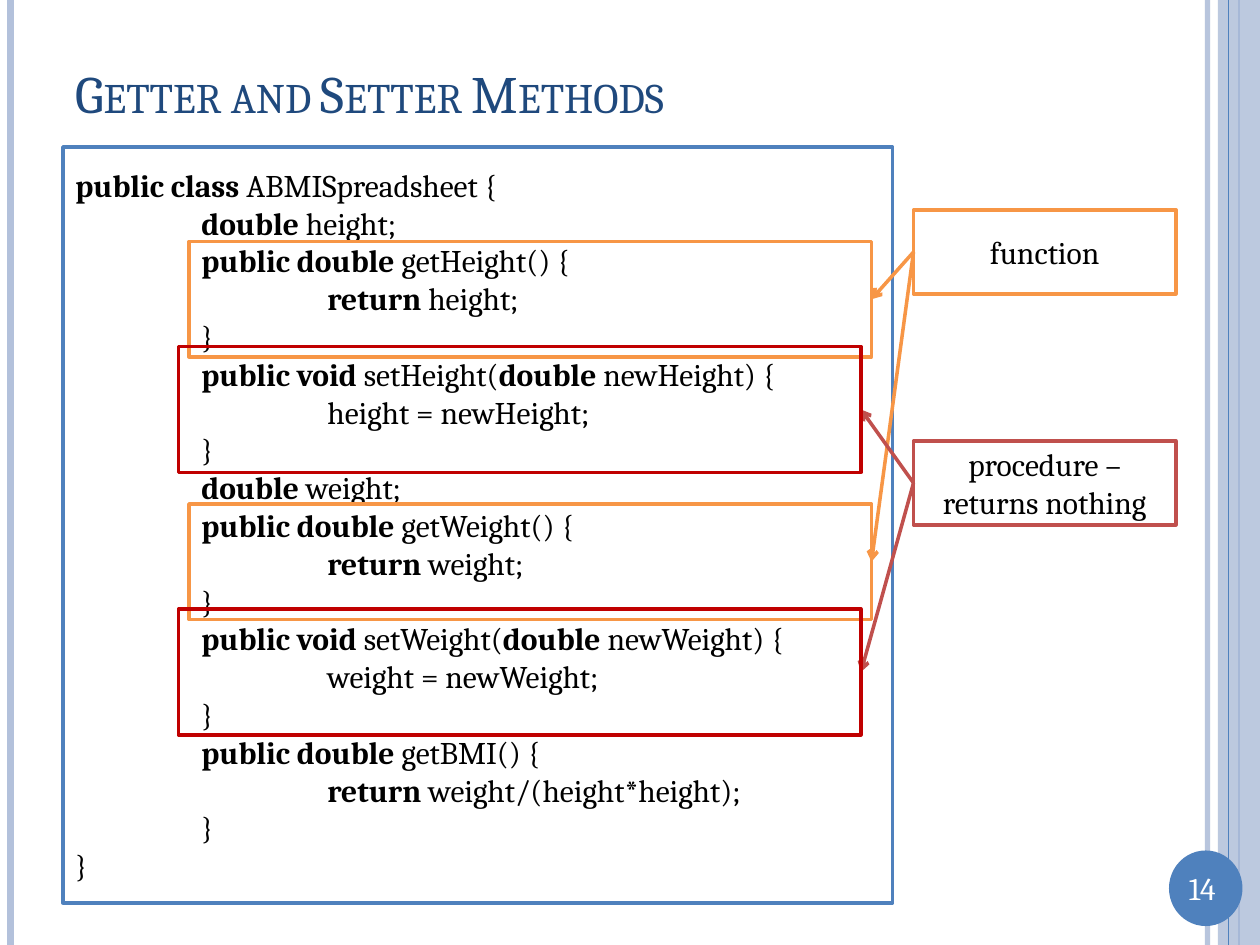
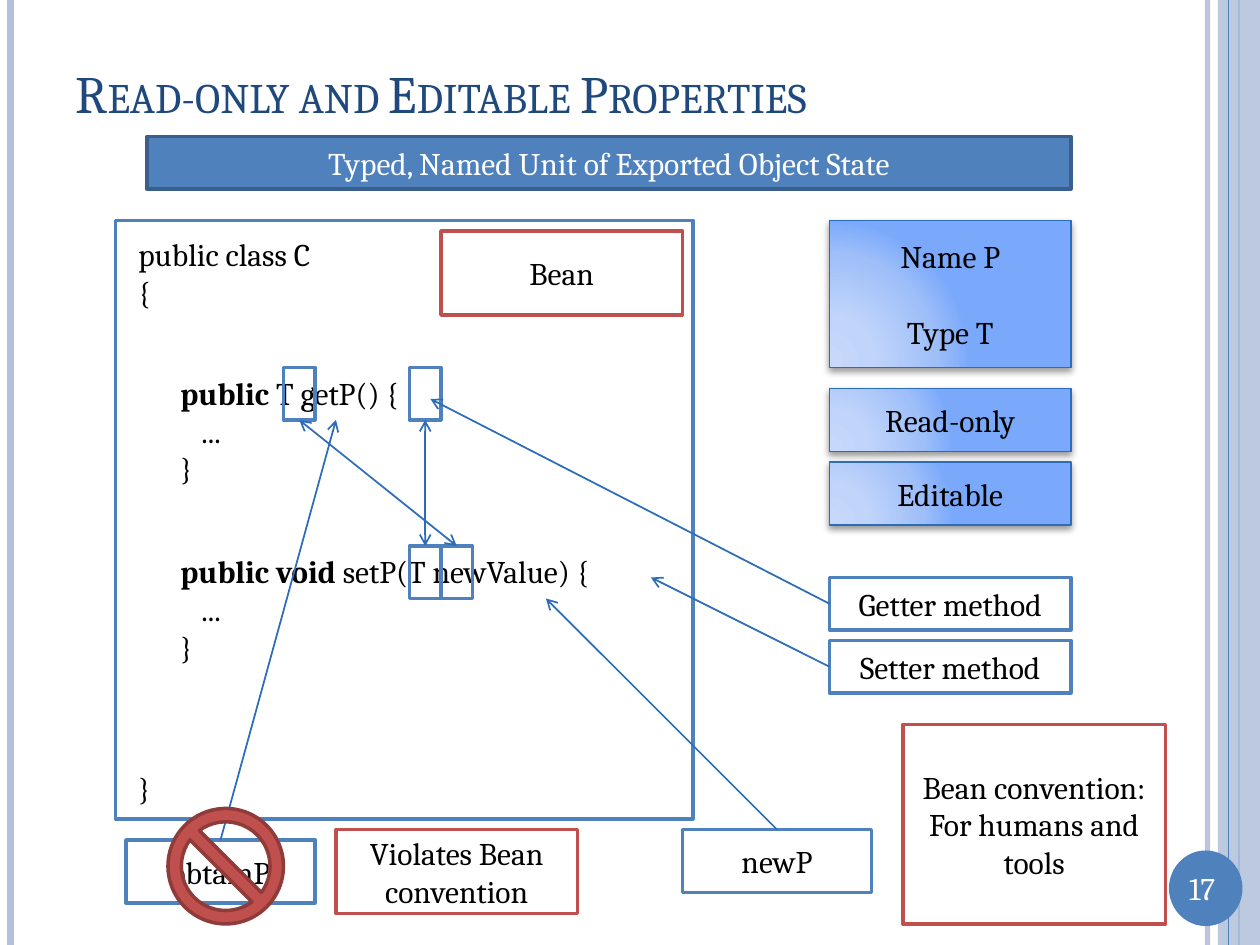
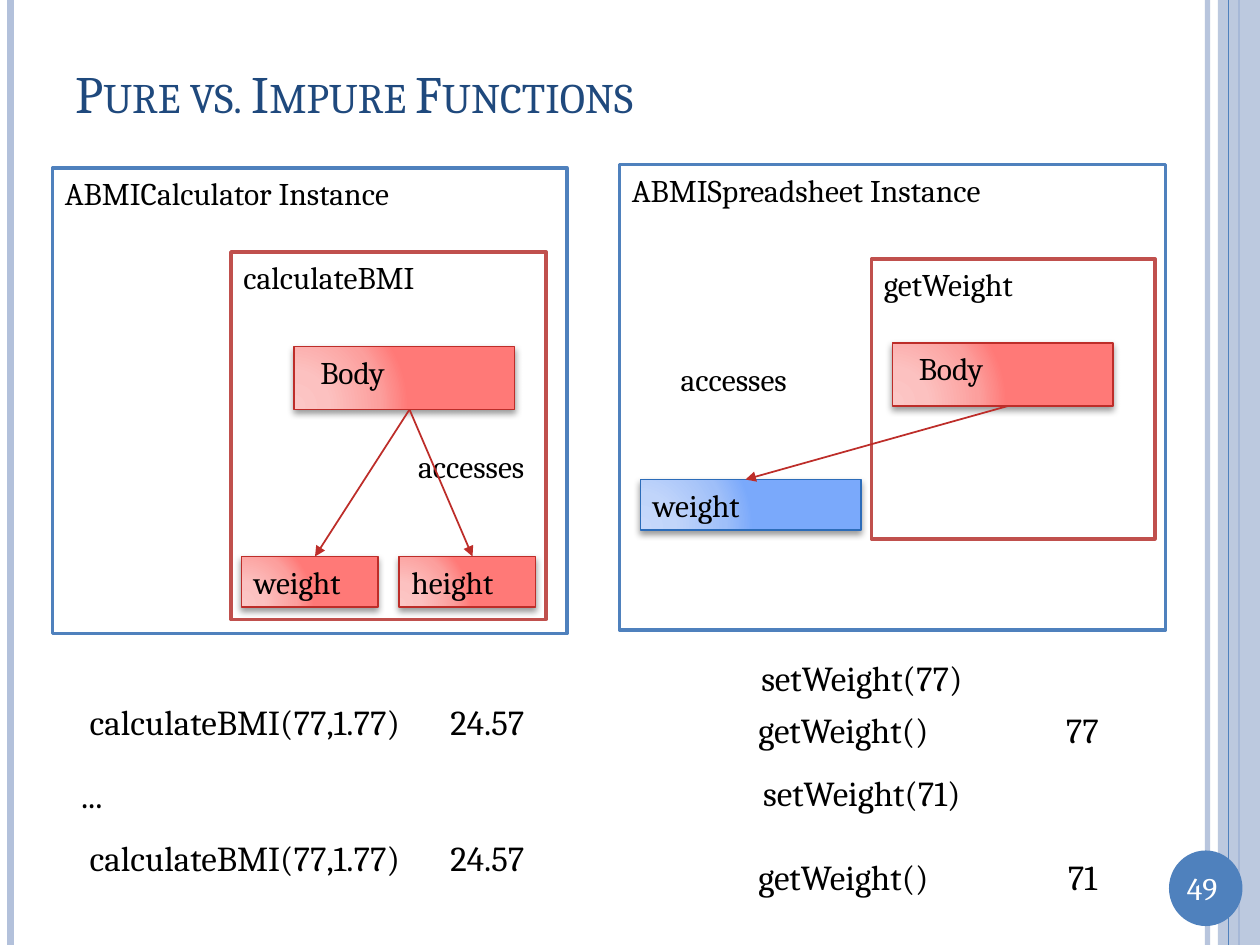
from dataclasses import dataclass

from lxml import etree
from pptx import Presentation
from pptx import util as u
from pptx.dml.color import RGBColor
from pptx.enum import shapes, text
from pptx.oxml import ns, parse_xml

Pt = u.Pt
FONT = "Cambria"
WHITE = RGBColor(0xFF, 0xFF, 0xFF)
BLACK = RGBColor(0x00, 0x00, 0x00)
NAVY = RGBColor(0x1F, 0x49, 0x7D)
BLUE = RGBColor(0x4F, 0x81, 0xBD)
DARK_BLUE = RGBColor(0x3A, 0x5F, 0x8C)
DEEP_BLUE = RGBColor(0x2C, 0x6C, 0xB9)
PALE_BLUE = RGBColor(0xB3, 0xC1, 0xDB)
RED = RGBColor(0xC0, 0x50, 0x4D)
DARK_RED = RGBColor(0x8E, 0x3B, 0x39)
DEEP_RED = RGBColor(0xBD, 0x2D, 0x29)
PURE_RED = RGBColor(0xC0, 0x00, 0x00)
ORANGE = RGBColor(0xF7, 0x96, 0x46)
BLUE_GLOW = [RGBColor.from_string(c) for c in ("C7D8FB", "C1D5FA", "9FBFF9", "7AA9FB")]
RED_GLOW = [RGBColor.from_string(c) for c in ("FCC7C6", "FCC1C0", "FC9F9D", "FF7977")]
GLOW_STOPS = (0, 30, 75, 100)

LEFT, CENTER = text.PP_ALIGN.LEFT, text.PP_ALIGN.CENTER
TOP, MIDDLE = text.MSO_ANCHOR.TOP, text.MSO_ANCHOR.MIDDLE
RECTANGLE = shapes.MSO_SHAPE.RECTANGLE


@dataclass
class Box:
    """A rectangle in points."""
    left: float
    top: float
    width: float
    height: float

    def inner(self, x, y, width, height):
        """Return a box offset from this one's top left corner."""
        return Box(self.left + x, self.top + y, width, height)

    def point(self, x, y):
        """Return the point at the given offset."""
        return self.left + x, self.top + y

    def edge(self, across, down):
        """Return the point at the given fractions of the box."""
        return self.point(self.width * across, self.height * down)

    def lengths(self):
        """Return left, top, width and height as lengths."""
        return [Pt(v) for v in (self.left, self.top, self.width, self.height)]


PAGE = Box(0, 0, 720, 540)


def add_xml(parent, tag, **attributes):
    """Append a drawing element and return it."""
    return etree.SubElement(parent, ns.qn(tag), attributes)


def set_alpha(element, percent):
    """Make the colours below an element translucent."""
    for colour in element.iter(ns.qn("a:srgbClr")):
        add_xml(colour, "a:alpha", val=str(percent * 1000))


def write(shape, content, size=18, colour=BLACK, align=CENTER, anchor=MIDDLE,
          wrap=True, inset=7.2, step=72, gap=0, small_caps=False):
    """Fill in text; bars toggle bold and leading tabs set the indent."""
    frame = shape.text_frame
    frame.word_wrap = wrap
    frame.vertical_anchor = anchor
    frame.margin_left = Pt(inset)
    frame.text = content
    for index, paragraph in enumerate(frame.paragraphs):
        line = paragraph.text
        pieces = line.lstrip("\t").split("|")
        depth = len(line) - len(line.lstrip("\t"))
        paragraph.text = pieces[0]
        for position, piece in enumerate(pieces[1:], 1):
            run = paragraph.add_run()
            run.text = piece
            run.font.bold = position % 2 == 1
        paragraph.alignment = align
        if depth:
            paragraph._p.get_or_add_pPr().set("marL", str(Pt(depth * step)))
        if index and gap:
            paragraph.space_before = Pt(gap)
        for run in paragraph.runs:
            run.font.name = FONT
            run.font.size = Pt(size)
            run.font.color.rgb = colour
            if small_caps:
                run.font._element.set("cap", "small")


def add_box(slide, box, content="", fill=WHITE, line=None, width=2, kind=RECTANGLE, **style):
    """Add a flat preset shape with optional text."""
    shape = slide.shapes.add_shape(kind, *box.lengths())
    shape.shadow.inherit = False
    if fill is None:
        shape.fill.background()
    else:
        shape.fill.solid()
        shape.fill.fore_color.rgb = fill
    if line is None:
        shape.line.fill.background()
    else:
        shape.line.color.rgb = line
        shape.line.width = Pt(width)
    if content:
        write(shape, content, **style)
    return shape


def add_glow_box(slide, box, content, stops, line, **style):
    """Add a box with a radial gradient and a soft shadow."""
    shape = add_box(slide, box, content, line=line, width=1, **style)
    properties = shape._element.spPr
    gradient = parse_xml(f'<a:gradFill {ns.nsdecls("a")} rotWithShape="1"/>')
    stop_list = add_xml(gradient, "a:gsLst")
    for position, colour in zip(GLOW_STOPS, stops):
        stop = add_xml(stop_list, "a:gs", pos=str(position * 1000))
        add_xml(stop, "a:srgbClr", val=str(colour))
    circle = add_xml(gradient, "a:path", path="circle")
    add_xml(circle, "a:fillToRect", l="5000", t="100000", r="120000", b="10000")
    properties.replace(properties.find(ns.qn("a:solidFill")), gradient)
    shadow = add_xml(properties.find(ns.qn("a:effectLst")), "a:outerShdw",
                     blurRad=str(Pt(4)), dist=str(Pt(2)), dir="5400000", rotWithShape="0")
    add_xml(shadow, "a:srgbClr", val=str(BLACK))
    set_alpha(shadow, 40)


def add_label(slide, box, content, **style):
    """Add a plain text box."""
    write(slide.shapes.add_textbox(*box.lengths()), content, **style)


def add_line(slide, start, end, colour, width=1, head=None, tail=None):
    """Add a straight connector with optional arrowheads."""
    ends = [Pt(v) for v in (*start, *end)]
    connector = slide.shapes.add_connector(shapes.MSO_CONNECTOR.STRAIGHT, *ends)
    connector.line.color.rgb = colour
    connector.line.width = Pt(width)
    outline = connector.line._ln
    for tag, arrow in (("a:headEnd", head), ("a:tailEnd", tail)):
        if arrow:
            add_xml(outline, tag, type=arrow)
    add_xml(connector._element.spPr, "a:effectLst")
    return connector


def add_frame(presentation, title, number):
    """Add a slide with side bands, page badge and title."""
    slide = presentation.slides.add_slide(presentation.slide_layouts[6])

    def stripe(x, colour, width):
        """Add a full-height vertical line."""
        return add_line(slide, (x, 0), (x, PAGE.height), colour, width)

    set_alpha(stripe(690, PALE_BLUE, 3)._element, 93)
    stripe(6, PALE_BLUE, 4.5)
    stripe(708, BLUE, 1.5)
    band = add_box(slide, PAGE.inner(696, 0, 24, PAGE.height), fill=PALE_BLUE)
    set_alpha(band._element.spPr, 87)
    stripe(702, BLUE, 0.75)
    add_box(slide, PAGE.inner(668, 486, 42, 43.2), fill=BLUE, kind=shapes.MSO_SHAPE.OVAL)
    add_label(slide, PAGE.inner(666, 493.2, 42, 29), str(number), colour=WHITE, anchor=TOP)
    add_label(slide, PAGE.inner(36, 21.6, 624, 62.6), title, size=30, colour=NAVY,
              align=LEFT, small_caps=True)
    return slide


SPREADSHEET_CODE = """|public class |ABMISpreadsheet {
\t|double| height;
\t|public double |getHeight() {
\t\t|return| height;
\t}
\t|public void |setHeight(|double |newHeight) {
\t\theight = newHeight;
\t}
\t|double| weight;
\t|public double |getWeight() {
\t\t|return| weight;
\t}
\t|public void |setWeight(|double |newWeight) {
\t\tweight = newWeight;
\t}
\t|public double |getBMI() {
\t\t|return| weight/(height*height);
\t}
}"""


def draw_annotated_class(slide, box):
    """Draw the class listing with its getters and setters pointed out."""
    add_box(slide, box.inner(0, 0, 474, 432), SPREADSHEET_CODE, line=BLUE, align=LEFT)
    function = box.inner(486, 36, 150, 48)
    procedure = box.inner(486, 168, 150, 48)
    add_box(slide, procedure, "procedure – returns nothing", line=RED)
    add_box(slide, function, "function", fill=None, line=ORANGE)
    property_step = 150
    getters = [box.inner(72, 54 + i * property_step, 390, 66) for i in range(2)]
    setters = [box.inner(66, 114 + i * property_step, 390, 72) for i in range(2)]
    for label, methods, arrow_colour, frame_colour in (
            (function, getters, ORANGE, ORANGE), (procedure, setters, RED, PURE_RED)):
        for method in methods:
            add_line(slide, label.edge(0, 0.5), method.edge(1, 0.5), arrow_colour, 2, tail="arrow")
            add_box(slide, method, fill=None, line=frame_colour)


def draw_bean_class(slide, box):
    """Draw the class outline and link the matching parts of its methods."""
    add_box(slide, box, line=BLUE)
    for part, code in (
            (box.inner(6, 6, 318, 48), "public class C\n{"),
            (box.inner(6, 312, 318, 24), "}"),
            (box.inner(30, 84, 294, 72), "|public| T getP() {\n\t...\n}"),
            (box.inner(30, 186, 294, 72), "|public void |setP(T newValue) {\n\t...\n}")):
        add_box(slide, part, code, align=LEFT, step=12)
    for getter_x, setter_x in ((168, 168), (96, 186)):
        getter_part = box.inner(getter_x + (0 if getter_x == 96 else 0), 84, 18, 30)
        setter_part = box.inner(setter_x, 186, 18, 30)
        for part in (getter_part, setter_part):
            add_box(slide, part, fill=None, line=BLUE)
        add_line(slide, getter_part.edge(0.5, 1), setter_part.edge(0.5, 0), DEEP_BLUE,
                 head="arrow", tail="arrow")
    add_box(slide, box.inner(186, 6, 138, 48), "Bean", line=RED)


def draw_property_kinds(slide, box):
    """Draw the stack of boxes that describe a property."""
    for top, height, content in ((0, 84, "Name P\nType T"), (96, 36, "Read-only"),
                                 (138, 36, "Editable")):
        add_glow_box(slide, box.inner(0, top, box.width, height), content,
                     BLUE_GLOW, DEEP_BLUE, gap=21.6)


def draw_callouts(slide, box):
    """Draw the labels around the class and their arrows into it."""
    for label, content, start, target in (
            (box.inner(408, 204, 138, 30), "Getter method", (0, 0.5), (180, 102)),
            (box.inner(408, 240, 138, 30), "Setter method", (0, 0.5), (306, 204)),
            (box.inner(324, 348, 108, 36), "newP", (0.5, 0), (246, 216)),
            (box.inner(6, 354, 108, 36), "obtainP", (0.5, 0), (126, 114))):
        add_box(slide, label, content, line=BLUE)
        add_line(slide, label.edge(*start), box.point(*target), DEEP_BLUE, tail="arrow")
    ban = add_box(slide, box.inner(30, 336, 66, 66), fill=RED, line=DARK_RED,
                  kind=shapes.MSO_SHAPE.NO_SYMBOL)
    ban.adjustments[0] = 0.116
    add_box(slide, box.inner(126, 348, 138, 48), "Violates Bean convention", line=RED)
    add_box(slide, box.inner(450, 288, 150, 114), "Bean convention:\nFor humans and tools",
            line=RED)


def draw_instance(slide, box, title, method, method_title, body, variables, accesses):
    """Draw an instance whose method body accesses some variables."""
    plain = {"align": LEFT, "anchor": TOP}
    add_box(slide, box, title, line=BLUE, **plain)
    add_box(slide, method, method_title, line=RED, **plain)
    add_glow_box(slide, body, "Body", RED_GLOW, DEEP_RED, inset=15, **plain)
    for variable, name, stops, outline, _ in variables:
        add_glow_box(slide, variable, name, stops, outline, **plain)
    add_label(slide, accesses, "accesses", inset=11, **plain)
    for variable, *_, target in variables:
        add_line(slide, body.point(66, body.height), variable.point(target, 0),
                 DEEP_RED, tail="triangle")


def draw_calls(slide, box, calls):
    """Draw the rows of calls and results below an instance."""
    for x, y, width, content in calls:
        add_label(slide, box.inner(x, y, width, 32), content, size=20, wrap=False)


def build_getter_setter_slide(presentation):
    """Build the slide on getters and setters."""
    slide = add_frame(presentation, "Getter and Setter Methods", 14)
    draw_annotated_class(slide, Box(36, 84, 636, 432))


def build_properties_slide(presentation):
    """Build the slide on read-only and editable properties."""
    slide = add_frame(presentation, "Read-only and Editable Properties", 17)
    class_box = Box(66, 126, 330, 342)
    add_box(slide, Box(84, 78, 528, 30), "Typed, Named Unit of Exported Object State",
            fill=BLUE, line=DARK_BLUE, colour=WHITE)
    draw_bean_class(slide, class_box)
    draw_property_kinds(slide, Box(474, 126, 138, 174))
    draw_callouts(slide, class_box)


def build_functions_slide(presentation):
    """Build the slide that compares pure and impure functions."""
    slide = add_frame(presentation, "Pure vs. Impure Functions", 49)
    calculator = Box(30, 96, 294, 266)
    parameters = [(calculator.inner(108 + i * 90, 222, 78, 29), name, RED_GLOW, DEEP_RED, 42)
                  for i, name in enumerate(("weight", "height"))]
    draw_instance(slide, calculator, "ABMICalculator Instance",
                  calculator.inner(102, 48, 180, 210), "calculateBMI",
                  calculator.inner(138, 102, 126, 36), parameters,
                  calculator.inner(198, 156, 102, 36))
    spreadsheet = Box(354, 94, 312, 266)
    field = (spreadsheet.inner(12, 180, 126, 29), "weight", BLUE_GLOW, DEEP_BLUE, 60)
    draw_instance(slide, spreadsheet, "ABMISpreadsheet Instance",
                  spreadsheet.inner(144, 54, 162, 160), "getWeight",
                  spreadsheet.inner(156, 102, 126, 36), [field],
                  spreadsheet.inner(24, 108, 102, 36))
    pure_calls = [call for y in (0, 78) for call in (
        (0, y, 220, "calculateBMI(77,1.77)"), (216, y, 65, "24.57"))]
    draw_calls(slide, Box(30, 396, 281, 110), pure_calls + [(7, 42, 31, "...")])
    impure_calls = [call for set_y, get_y, value in ((0, 30, 77), (66, 114, 71)) for call in (
        (0, set_y, 145, f"setWeight({value})"), (0, get_y, 124, "getWeight()"),
        (180, get_y, 37, str(value)))]
    draw_calls(slide, Box(420, 371, 217, 146), impure_calls)


def main():
    """Build and save the presentation."""
    presentation = Presentation()
    presentation.slide_width = Pt(PAGE.width)
    presentation.slide_height = Pt(PAGE.height)
    build_getter_setter_slide(presentation)
    build_properties_slide(presentation)
    build_functions_slide(presentation)
    presentation.save("out.pptx")


if __name__ == "__main__":
    main()
